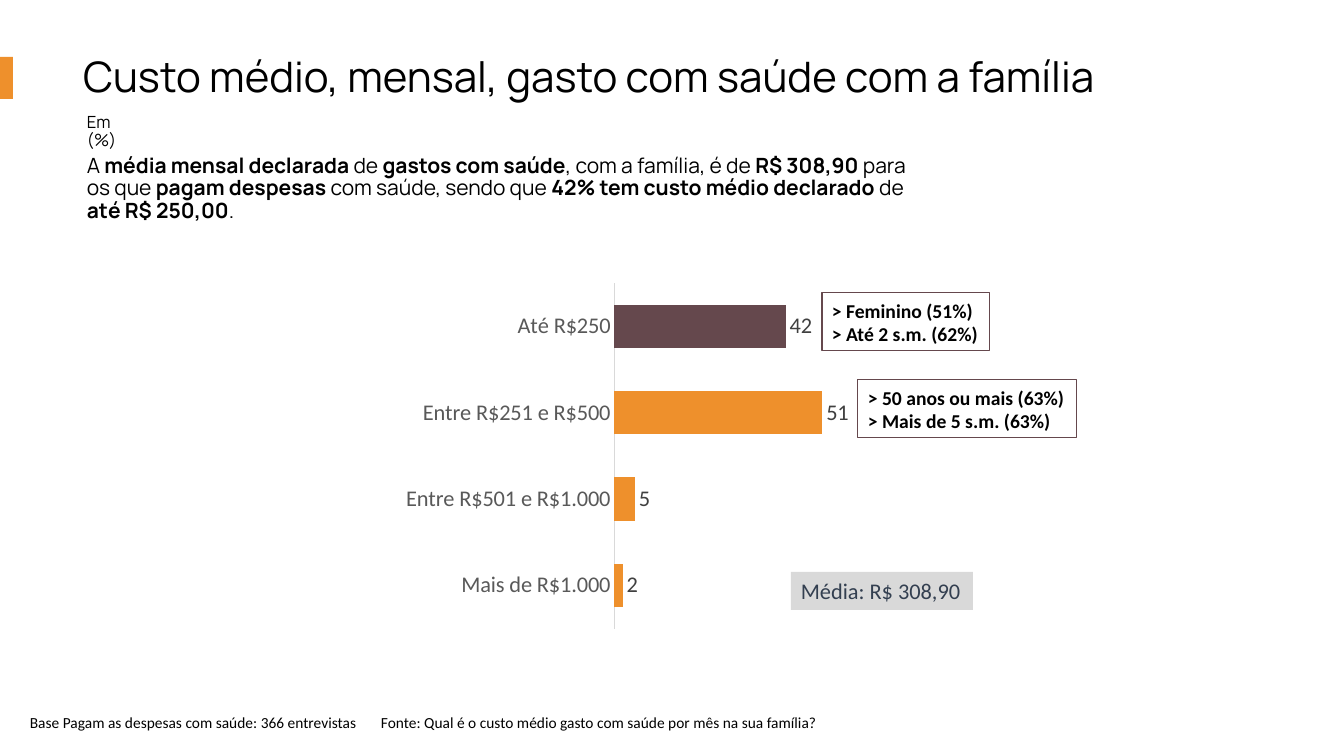
from lxml import etree
from pptx import Presentation
from pptx.chart.data import CategoryChartData
from pptx.dml.color import RGBColor
from pptx.enum.chart import XL_CHART_TYPE as ChartType, XL_LABEL_POSITION as LabelPos, XL_TICK_MARK as Tick
from pptx.enum.shapes import MSO_SHAPE as Shape
from pptx.enum.text import MSO_ANCHOR as Anchor, MSO_AUTO_SIZE as AutoSize, PP_ALIGN as Align
from pptx.oxml.ns import qn
from pptx.util import Pt

PX = 12192000 / 1344
COLORS = {"orange": "EE902C", "plum": "65484D", "black": "000000", "white": "FFFFFF",
          "axis": "D9D9D9", "category": "595959", "value": "404040", "navy": "333F50"}


def px(*lengths):
    """Turn pixel lengths into EMU."""
    return [round(length * PX) for length in lengths]


def style(font, size, color="black", face="Calibri", bold=None):
    font.size, font.name, font.bold = Pt(size), face, bold
    font.color.rgb = RGBColor.from_string(COLORS[color])


prs = Presentation()
prs.slide_width, prs.slide_height = px(1344, 756)
slide = prs.slides.add_slide(prs.slide_layouts[5])
shapes = slide.shapes

# Heading
title = shapes.title
title.left, title.top, title.width, title.height = px(73, 48, 1110, 62)
title.text_frame.text = "Custo médio, mensal, gasto com saúde com a família"
title.text_frame.vertical_anchor = Anchor.MIDDLE
title.text_frame.auto_size = AutoSize.NONE
heading = title.text_frame.paragraphs[0]
heading.alignment = Align.LEFT
heading.line_spacing = 0.9
style(heading.font, 30, face="Manrope")

# Summary, unit and source: box, size, font, line spacing, (text, bold) parts
summary = [("A ", False), ("média mensal declarada ", True), ("de ", False),
           ("gastos com saúde", True), (", com a família, é de ", False),
           ("R$ 308,90 ", True), ("para os que ", False), ("pagam despesas ", True),
           ("com saúde, sendo que ", False), ("42% tem custo médio declarado ", True),
           ("de ", False), ("até R$ 250,00", True), (".", False)]
source = [("Base Pagam as despesas com saúde: 366 entrevistas\t"
           "Fonte: Qual é o custo médio gasto com saúde por mês na sua família?", None)]
for box, size, face, spacing, parts in [
        ((77, 150, 856, 87), 15, "Manrope", 0.9, summary),
        ((77, 109, 60, 51), 12, "Manrope", 0.9, [("Em (%)", None)]),
        ((20, 708, 1300, 30), 11, "Calibri", 1.0, source)]:
    frame = shapes.add_textbox(*px(*box)).text_frame
    frame.word_wrap = True
    passage = frame.paragraphs[0]
    passage.line_spacing = spacing
    for words, bold in parts:
        run = passage.add_run()
        run.text, run.font.bold = words, bold
    if parts is source:
        tabs = etree.SubElement(passage._p.get_or_add_pPr(), qn("a:tabLst"))
        etree.SubElement(tabs, qn("a:tab"), pos=str(px(351)[0]), algn="l")
    style(passage.font, size, face=face)

# Spending chart
spending = CategoryChartData(number_format="####")
spending.categories = ["Até R$250", "Entre R$251 e R$500", "Entre R$501 e R$1.000", "Mais de R$1.000"]
spending.add_series("Series 1", (42, 51, 5, 2))
chart = shapes.add_chart(ChartType.BAR_CLUSTERED, *px(246, 268, 784, 376), spending).chart
chart.has_legend = chart.has_title = False
style(chart.font, 10)

ranges = chart.category_axis
ranges.reverse_order = True
ranges.major_tick_mark = ranges.minor_tick_mark = Tick.NONE
ranges.format.line.color.rgb = RGBColor.from_string(COLORS["axis"])
ranges.format.line.width = Pt(0.75)
style(ranges.tick_labels.font, 16, "category")

percent = chart.value_axis
percent.visible = percent.has_major_gridlines = False
percent.minimum_scale, percent.maximum_scale = 0, 100

plot = chart.plots[0]
plot.gap_width = 100
plot.vary_by_categories = False
bars = plot.series[0]
for fill, color in [(bars.format.fill, "orange"), (bars.points[0].format.fill, "plum")]:
    fill.solid()
    fill.fore_color.rgb = RGBColor.from_string(COLORS[color])
labels = bars.data_labels
labels.show_value = True
labels.position = LabelPos.OUTSIDE_END
labels.number_format, labels.number_format_is_linked = "####", False
style(labels.font, 16, "value")

plot_area = chart._chartSpace.chart.plotArea
for old_layout in plot_area.findall(qn("c:layout")):
    plot_area.remove(old_layout)
layout = etree.Element(qn("c:layout"))
plot_area.insert(0, layout)
manual = etree.SubElement(layout, qn("c:manualLayout"))
for tag, value in [("layoutTarget", "inner"), ("xMode", "edge"), ("yMode", "edge"),
                   ("x", "0.47"), ("y", "0.04"), ("w", "0.52"), ("h", "0.92")]:
    etree.SubElement(manual, qn(f"c:{tag}"), val=value)

# Accent bar, average and callouts: box, fill, line, size, text colour, bold, lines
for box, fill, line, size, color, bold, lines in [
        ((0, 57, 13, 42), "orange", None, 16, "black", None, []),
        ((791, 572, 182, 38), "axis", None, 16, "navy", None, ["Média: R$ 308,90"]),
        ((822, 293, 168, 58), "white", "plum", 14, "black", True,
         ["> Feminino (51%)", "> Até 2 s.m. (62%)"]),
        ((858, 380, 219, 58), "white", "plum", 14, "black", True,
         ["> 50 anos ou mais (63%)", "> Mais de 5 s.m. (63%)"])]:
    panel = shapes.add_shape(Shape.RECTANGLE, *px(*box))
    panel.shadow.inherit = False
    panel.fill.solid()
    panel.fill.fore_color.rgb = RGBColor.from_string(COLORS[fill])
    if line:
        panel.line.color.rgb = RGBColor.from_string(COLORS[line])
        panel.line.width = Pt(0.75)
    else:
        panel.line.fill.background()
    if lines:
        panel.text_frame.text = "\n".join(lines)
        panel.text_frame.word_wrap = False
        for entry in panel.text_frame.paragraphs:
            entry.alignment = Align.LEFT
            style(entry.font, size, color, bold=bold)

prs.save("out.pptx")
